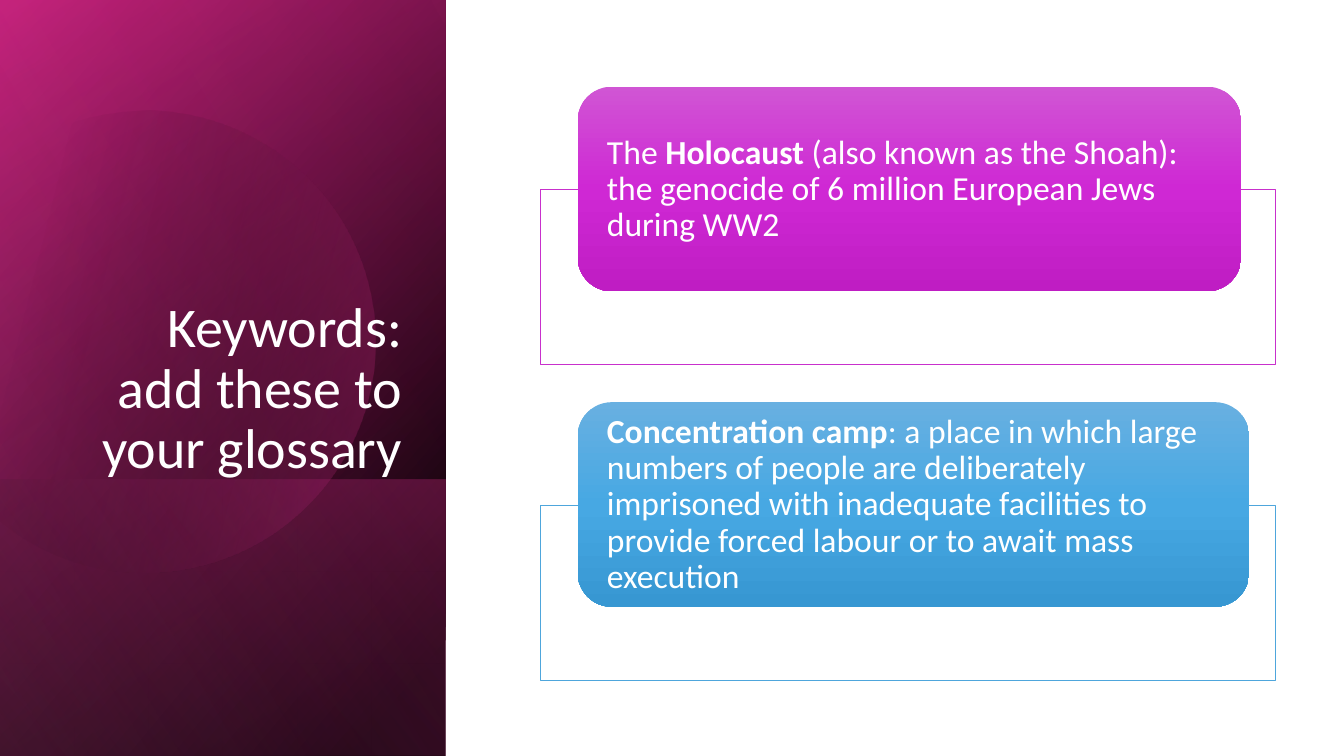
from dataclasses import dataclass

import lxml.etree
import pptx
import pptx.dml.color
import pptx.enum.shapes
import pptx.enum.text
import pptx.oxml.ns
import pptx.util

EMU_PER_PX = 9144
SHAPES = pptx.enum.shapes.MSO_SHAPE
ANCHOR = pptx.enum.text.MSO_ANCHOR
ALIGN = pptx.enum.text.PP_ALIGN
qn = pptx.oxml.ns.qn

# Cut disc, in px from the corner of its box: one point is a line, three a curve.
DISC_START = (267, 10)
DISC_SEGMENTS = [
    [(359, 39), (427, 126), (427, 228)],
    [(427, 355), (324, 457), (198, 457)],
    [(119, 457), (49, 417), (9, 356)],
    [(0, 342)],
    [(91, 27)],
    [(109, 18)],
    [(137, 6), (167, 0), (198, 0)],
    [(222, 0), (245, 4), DISC_START],
]


def px(length):
    return pptx.util.Emu(round(length * EMU_PER_PX))


def rgb(colour):
    return pptx.dml.color.RGBColor.from_string(colour)


def set_all(target, formats):
    for attribute, value in formats.items():
        setattr(target, attribute, value)


@dataclass(frozen=True)
class Theme:
    font: str = "Calibri"
    title_size: int = 40
    body_size: int = 24
    white: str = "FFFFFF"
    black: str = "000000"
    pink: str = "E32D91"
    deep_pink: str = "B4186E"
    light_pink: str = "EE81BD"
    magenta: str = "C830CC"
    magenta_shades: tuple = ("D055D4", "CF28D4", "BF1DC3")
    blue: str = "4EA6DC"
    blue_shades: tuple = ("68B0E1", "47A8E3", "3797D2")


class KeywordSlide:
    def __init__(self, deck, theme):
        self.theme = theme
        self.shapes = deck.slides.add_slide(deck.slide_layouts[5]).shapes

    def gradient(self, shape, stops, angle):
        """Fill with (position %, colour, opacity %) stops; angle is clockwise."""
        shape.shadow.inherit = False
        shape.line.fill.background()
        shape.fill.background()
        properties = shape._element.spPr
        fill = lxml.etree.Element(qn("a:gradFill"), rotWithShape="1")
        stop_list = lxml.etree.SubElement(fill, qn("a:gsLst"))
        for position, colour, opacity in stops:
            stop = lxml.etree.SubElement(stop_list, qn("a:gs"), pos=str(position * 1000))
            tint = lxml.etree.SubElement(stop, qn("a:srgbClr"), val=colour)
            if opacity < 100:
                lxml.etree.SubElement(tint, qn("a:alpha"), val=str(opacity * 1000))
        lxml.etree.SubElement(fill, qn("a:lin"), ang=str(angle * 60000), scaled="0")
        properties.replace(properties.find(qn("a:noFill")), fill)

    def panel_layer(self, box, stops, angle):
        """Add a mirrored rectangle turned by a quarter."""
        layer = self.shapes.add_shape(SHAPES.RECTANGLE, *map(px, box))
        layer.rotation = 90
        layer._element.spPr.find(qn("a:xfrm")).set("flipH", "1")
        self.gradient(layer, stops, angle)

    def curved_outline(self, box, start, segments, rotation, stops, angle):
        left, top, width, height = box
        builder = self.shapes.build_freeform(*start, scale=EMU_PER_PX)
        builder.add_line_segments([segment[-1] for segment in segments], close=True)
        outline = builder.convert_to_shape()
        set_all(outline, {"left": px(left), "top": px(top), "width": px(width),
                          "height": px(height), "rotation": rotation})
        track = next(outline._element.iter(qn("a:path")))
        for step in list(track):
            track.remove(step)
        track.set("w", str(width))
        track.set("h", str(height))
        names = {1: "a:lnTo", 3: "a:cubicBezTo"}
        steps = [("a:moveTo", [start])]
        steps += [(names[len(segment)], segment) for segment in segments]
        for name, points in steps:
            step = lxml.etree.SubElement(track, qn(name))
            for x, y in points:
                lxml.etree.SubElement(step, qn("a:pt"), x=str(x), y=str(y))
        lxml.etree.SubElement(track, qn("a:close"))
        self.gradient(outline, stops, angle)

    def frame(self, box, colour):
        frame = self.shapes.add_shape(SHAPES.RECTANGLE, *map(px, box))
        frame.shadow.inherit = False
        frame.fill.solid()
        frame.fill.fore_color.rgb = rgb(self.theme.white)
        tint = frame._element.spPr.find(qn("a:solidFill"))[0]
        lxml.etree.SubElement(tint, qn("a:alpha"), val="90000")
        frame.line.color.rgb = rgb(colour)
        frame.line.width = pptx.util.Pt(0.5)

    def card(self, box, shades):
        card = self.shapes.add_shape(SHAPES.ROUNDED_RECTANGLE, *map(px, box))
        stops = [(50 * step, shade, 100) for step, shade in enumerate(shades)]
        self.gradient(card, stops, 90)

    def style_run(self, run, size, bold=False):
        set_all(run.font, {"name": self.theme.font, "size": pptx.util.Pt(size),
                           "bold": bold})
        run.font.color.rgb = rgb(self.theme.white)

    def definition(self, box, pieces):
        """Add text made of (wording, bold) pieces."""
        frame = self.shapes.add_textbox(*map(px, box)).text_frame
        set_all(frame, {"word_wrap": True, "vertical_anchor": ANCHOR.MIDDLE,
                        "margin_left": px(19), "margin_right": px(19),
                        "margin_top": 0, "margin_bottom": 0})
        paragraph = frame.paragraphs[0]
        paragraph.line_spacing = 0.9
        for wording, bold in pieces:
            run = paragraph.add_run()
            run.text = wording
            self.style_run(run, self.theme.body_size, bold)

    def title(self, box, wording):
        heading = self.shapes.title
        set_all(heading, dict(zip(("left", "top", "width", "height"), map(px, box))))
        frame = heading.text_frame
        set_all(frame, {"text": wording, "word_wrap": True,
                        "auto_size": pptx.enum.text.MSO_AUTO_SIZE.NONE,
                        "vertical_anchor": ANCHOR.BOTTOM})
        paragraph = frame.paragraphs[0]
        set_all(paragraph, {"alignment": ALIGN.RIGHT, "line_spacing": 0.9})
        for run in paragraph.runs:
            self.style_run(run, self.theme.title_size)
        # The heading must lie above the side panel.
        self.shapes._spTree.append(heading._element)


def main():
    deck = pptx.Presentation()
    deck.slide_width, deck.slide_height = px(1333), px(750)
    theme = Theme()
    page = KeywordSlide(deck, theme)

    panel = (-154, 154, 750, 442)
    page.panel_layer(panel, [(8, theme.black, 100), (100, theme.deep_pink, 100)], 50)
    page.panel_layer(panel, [(0, theme.black, 0), (99, theme.pink, 46)], 30)
    page.panel_layer((84, 392, 274, 442),
                     [(2, theme.pink, 29), (100, theme.black, 30)], 130)
    page.curved_outline((-55, 106, 427, 457), DISC_START, DISC_SEGMENTS, 343.9,
                        [(29, theme.black, 0), (100, theme.pink, 43)], 30)
    page.panel_layer(panel, [(0, theme.black, 0), (99, theme.light_pink, 11)], 120)

    keywords = [
        (theme.magenta, theme.magenta_shades, 658, [
            ("The", False),
            (" Holocaust ", True),
            ("(also known as the Shoah): the genocide of 6 million European Jews "
             "during WW2", False),
        ]),
        (theme.blue, theme.blue_shades, 666, [
            ("Concentration camp", True),
            (": a place in which large numbers of people are deliberately imprisoned "
             "with inadequate facilities to provide forced labour or to await mass "
             "execution", False),
        ]),
    ]
    for row, (outline, shades, width, pieces) in enumerate(keywords):
        top = 86 + 313 * row
        page.frame((536, top + 102, 729, 174), outline)
        page.card((573, top, width, 203), shades)
        page.definition((583, top + 10, width - 20, 184), pieces)

    page.title((68, 220, 341, 262), "Keywords:\v add these to your glossary")
    deck.save("out.pptx")


if __name__ == "__main__":
    main()
